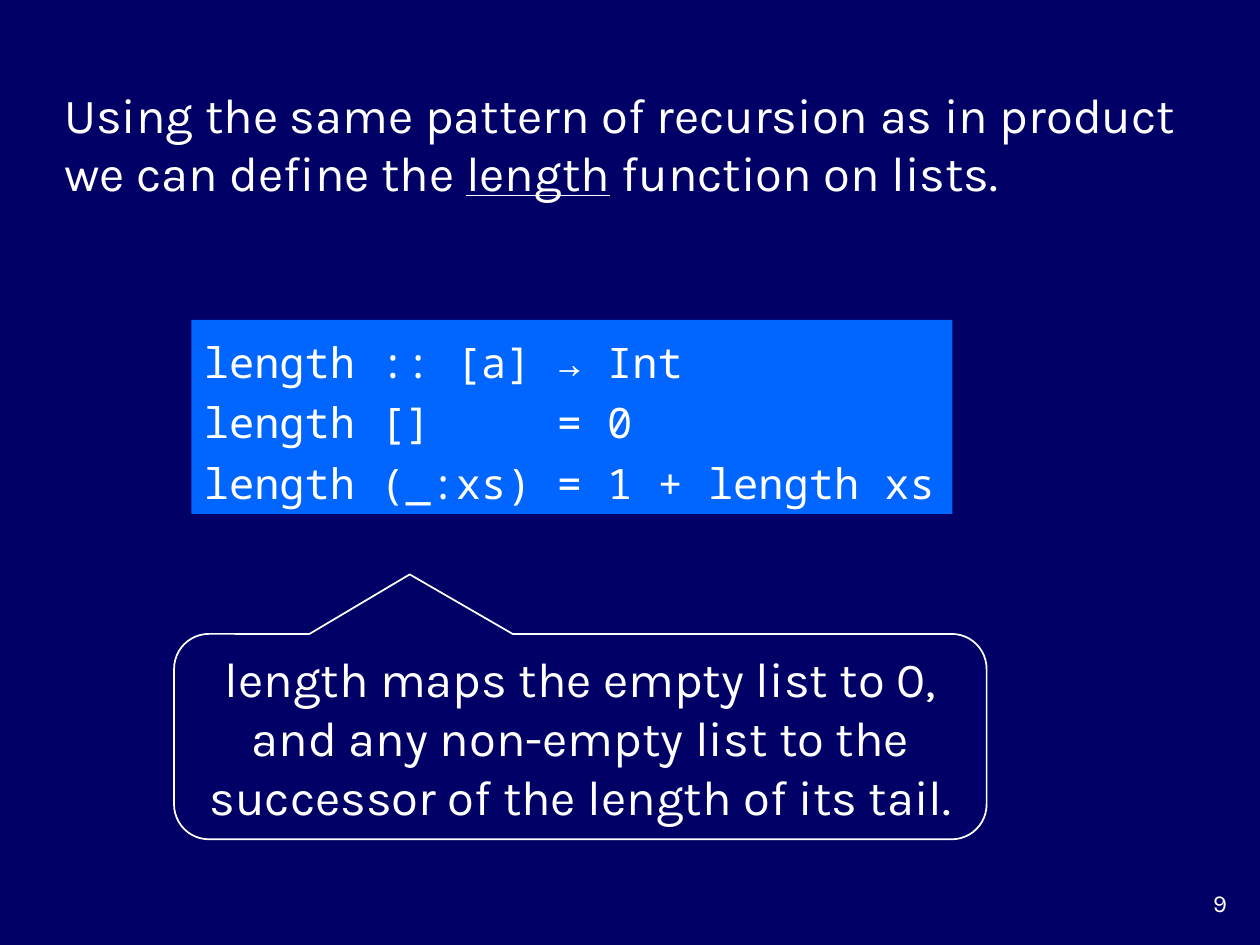
from dataclasses import dataclass

from pptx import Presentation
from pptx.dml.color import RGBColor
from pptx.enum.shapes import MSO_SHAPE
from pptx.enum.text import MSO_ANCHOR, MSO_AUTO_SIZE, PP_ALIGN
from pptx.util import Cm, Pt

# Content
STATEMENT = [
    ("Using the same pattern of recursion as in product we can define the ", False),
    ("length", True),
    (" function on lists.", False),
]
CODE = [
    "length :: [a] → Int",
    "length []     = 0",
    "length (_:xs) = 1 + length xs",
]
EXPLANATION = (
    "length maps the empty list to 0, and any non-empty list "
    "to the successor of the length of its tail."
)
PAGE_NUMBER = "9"

# Left, top, width, height in centimetres
STATEMENT_BOX = (1.04, 1.57, 22.96, 2.62)
CODE_BOX = (3.86, 6.45, 15.34, 3.91)
CALLOUT_BOX = (3.51, 12.78, 16.38, 4.14)
NUMBER_BOX = (23.29, 17.78, 1.7, 0.84)
CALLOUT_SHAPE = (-0.21, -0.79, 0.17)  # pointer x, pointer y, corner radius


@dataclass(frozen=True)
class Theme:
    background: RGBColor = RGBColor(0x00, 0x00, 0x66)
    panel: RGBColor = RGBColor(0x00, 0x66, 0xFF)
    ink: RGBColor = RGBColor(0xFF, 0xFF, 0xFF)
    prose: str = "Karla"
    mono: str = "Noto Sans Mono"
    prose_size: int = 28
    code_size: int = 24
    number_size: int = 14


THEME = Theme()


def place(box):
    return [Cm(length) for length in box]


def style(paragraph, face, size, align=PP_ALIGN.LEFT):
    paragraph.alignment = align
    paragraph.font.name = face
    paragraph.font.size = Pt(size)
    paragraph.font.color.rgb = THEME.ink


def set_frame(frame, wrap=True, anchor=MSO_ANCHOR.MIDDLE):
    frame.word_wrap = wrap
    frame.vertical_anchor = anchor
    frame.auto_size = MSO_AUTO_SIZE.NONE


def add_statement(slide):
    statement = slide.shapes.title
    statement.left, statement.top, statement.width, statement.height = place(STATEMENT_BOX)
    set_frame(statement.text_frame)
    paragraph = statement.text_frame.paragraphs[0]
    style(paragraph, THEME.prose, THEME.prose_size)
    for words, underlined in STATEMENT:
        run = paragraph.add_run()
        run.text = words
        if underlined:
            run.font.underline = True


def add_code(slide):
    panel = slide.shapes.add_shape(MSO_SHAPE.RECTANGLE, *place(CODE_BOX))
    panel.shadow.inherit = False
    panel.fill.solid()
    panel.fill.fore_color.rgb = THEME.panel
    panel.line.fill.background()
    set_frame(panel.text_frame, wrap=False)
    panel.text_frame.text = "\n".join(CODE)
    for paragraph in panel.text_frame.paragraphs:
        style(paragraph, THEME.mono, THEME.code_size)
        paragraph.line_spacing = 1.2


def add_callout(slide):
    callout = slide.shapes.add_shape(
        MSO_SHAPE.ROUNDED_RECTANGULAR_CALLOUT, *place(CALLOUT_BOX))
    for index, value in enumerate(CALLOUT_SHAPE):
        callout.adjustments[index] = value
    callout.shadow.inherit = False
    callout.fill.background()
    callout.line.color.rgb = THEME.ink
    callout.line.width = Pt(1)
    set_frame(callout.text_frame)
    callout.text_frame.text = EXPLANATION
    style(callout.text_frame.paragraphs[0], THEME.prose, THEME.prose_size, PP_ALIGN.CENTER)


def add_page_number(slide):
    number = slide.shapes.add_textbox(*place(NUMBER_BOX))
    set_frame(number.text_frame, anchor=MSO_ANCHOR.TOP)
    number.text_frame.text = PAGE_NUMBER
    style(number.text_frame.paragraphs[0], THEME.prose, THEME.number_size, PP_ALIGN.RIGHT)


def main():
    deck = Presentation()
    deck.slide_width, deck.slide_height = Cm(25.4), Cm(19.05)
    slide = deck.slides.add_slide(deck.slide_layouts.get_by_name("Title Only"))
    slide.background.fill.solid()
    slide.background.fill.fore_color.rgb = THEME.background

    add_page_number(slide)
    add_statement(slide)
    add_code(slide)
    add_callout(slide)
    deck.save("out.pptx")


if __name__ == "__main__":
    main()
